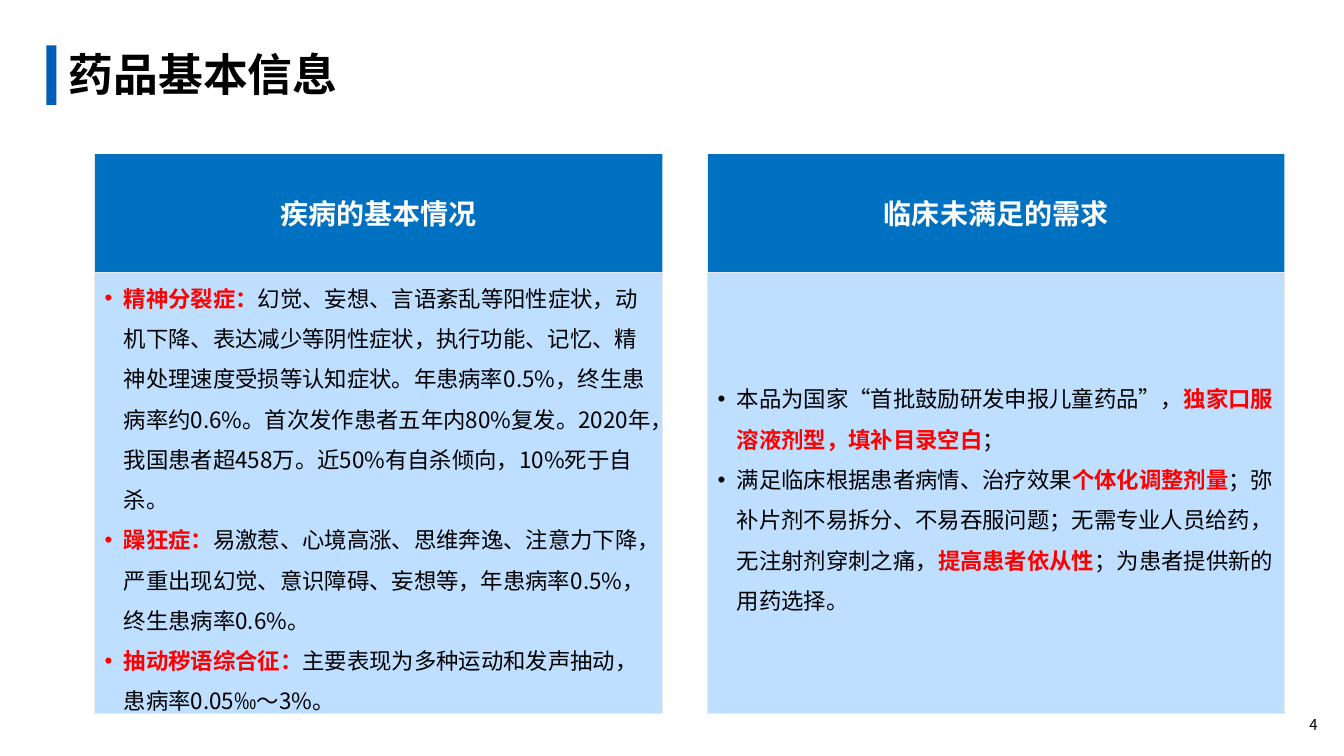
import lxml.etree
import pptx
import pptx.dml.color
import pptx.enum.lang
import pptx.enum.shapes
import pptx.enum.text
import pptx.oxml.ns
import pptx.util

PX = 9144
COLORS = {
    "black": "000000",
    "white": "FFFFFF",
    "red": "FF0000",
    "accent": "005EB8",
    "header": "0070C0",
    "panel": "BEDFFF",
    "border": "E9E9E9",
}
FONT = "Noto Sans CJK SC"
NUMBER_FONT = "Noto Sans CJK JP"
ALIGN = pptx.enum.text.PP_ALIGN
HEADER_HEIGHT = 117
BULLET_INDENT = 19

DISEASES = [
    [("精神分裂症：", True),
     ("幻觉、妄想、言语紊乱等阳性症状，动机下降、表达减少等阴性症状，执行功能、记忆、"
      "精神处理速度受损等认知症状。年患病率0.5%，终生患病率约0.6%。首次发作患者五年内"
      "80%复发。2020年，我国患者超458万。近50%有自杀倾向，10%死于自杀。", False)],
    [("躁狂症：", True),
     ("易激惹、心境高涨、思维奔逸、注意力下降，严重出现幻觉、意识障碍、妄想等，"
      "年患病率0.5%，终生患病率0.6%。", False)],
    [("抽动秽语综合征：", True),
     ("主要表现为多种运动和发声抽动，患病率0.05‰～3%。", False)],
]
NEEDS = [
    [("本品为国家“首批鼓励研发申报儿童药品”，", False),
     ("独家口服溶液剂型，填补目录空白", True),
     ("；", False)],
    [("满足临床根据患者病情、治疗效果", False),
     ("个体化调整剂量", True),
     ("；弥补片剂不易拆分、不易吞服问题；无需专业人员给药，无注射剂穿刺之痛，", False),
     ("提高患者依从性", True),
     ("；为患者提供新的用药选择。", False)],
]


def emu(*lengths):
    """Convert px lengths to EMU."""
    return [pptx.util.Emu(length * PX) for length in lengths]


def rgb(name):
    """Look up a named colour."""
    return pptx.dml.color.RGBColor.from_string(COLORS[name])


def add_run(paragraph, text, size, color, bold=False, font_name=FONT):
    """Append one formatted run, with its East Asian font set too."""
    run = paragraph.add_run()
    run.text = text
    font = run.font
    font.size = pptx.util.Pt(size)
    font.bold = bold
    font.name = font_name
    font.color.rgb = rgb(color)
    font.language_id = pptx.enum.lang.MSO_LANGUAGE_ID.SIMPLIFIED_CHINESE
    properties = run.font._element
    lxml.etree.SubElement(properties, pptx.oxml.ns.qn("a:ea"), typeface=font_name)


def add_bullet(paragraph):
    """Give a paragraph a hanging round bullet."""
    properties = paragraph._p.get_or_add_pPr()
    indent = BULLET_INDENT * PX
    properties.set("marL", str(indent))
    properties.set("indent", str(-indent))
    lxml.etree.SubElement(properties, pptx.oxml.ns.qn("a:buFont"), typeface="Arial")
    lxml.etree.SubElement(properties, pptx.oxml.ns.qn("a:buChar"), char="•")


def prepare_frame(text_frame):
    """Wrap the text, centre it vertically and keep the box size."""
    text_frame.word_wrap = True
    text_frame.auto_size = pptx.enum.text.MSO_AUTO_SIZE.NONE
    text_frame.vertical_anchor = pptx.enum.text.MSO_ANCHOR.MIDDLE


def add_rectangle(slide, box, fill, line=None):
    """Add a flat rectangle with an optional thin border."""
    kind = pptx.enum.shapes.MSO_SHAPE.RECTANGLE
    shape = slide.shapes.add_shape(kind, *emu(*box))
    shape.shadow.inherit = False
    shape.fill.solid()
    shape.fill.fore_color.rgb = rgb(fill)
    if line:
        shape.line.color.rgb = rgb(line)
        shape.line.width = pptx.util.Pt(0.75)
    else:
        shape.line.fill.background()
    prepare_frame(shape.text_frame)
    return shape


def fill_title(slide, box, text):
    """Place the title with the accent bar at its left."""
    left, top, width, height = box
    add_rectangle(slide, (left - 12, top + 4, 10, 59), "accent")
    title = slide.shapes.title
    title.left, title.top, title.width, title.height = emu(left, top, width, height)
    prepare_frame(title.text_frame)
    paragraph = title.text_frame.paragraphs[0]
    paragraph.alignment = ALIGN.LEFT
    add_run(paragraph, text, 32, "black", bold=True)


def add_panel(slide, box, heading, items):
    """Add a column with a heading band above a bulleted body."""
    left, top, width, height = box
    header = add_rectangle(slide, (left, top, width, HEADER_HEIGHT), "header")
    paragraph = header.text_frame.paragraphs[0]
    paragraph.alignment = ALIGN.CENTER
    add_run(paragraph, heading, 20, "white", bold=True)

    body_box = (left, top + HEADER_HEIGHT, width, height - HEADER_HEIGHT)
    text_frame = add_rectangle(slide, body_box, "panel", "border").text_frame
    for index, item in enumerate(items):
        paragraph = text_frame.add_paragraph() if index else text_frame.paragraphs[0]
        add_bullet(paragraph)
        paragraph.alignment = ALIGN.LEFT
        paragraph.line_spacing = 1.5
        for text, marked in item:
            add_run(paragraph, text, 16, "red" if marked else "black", bold=marked)


def add_page_number(slide, box, number):
    """Add the right-aligned page number."""
    text_frame = slide.shapes.add_textbox(*emu(*box)).text_frame
    prepare_frame(text_frame)
    text_frame.margin_left, text_frame.margin_right = emu(13, 13)
    text_frame.margin_top, text_frame.margin_bottom = emu(7, 7)
    paragraph = text_frame.paragraphs[0]
    paragraph.alignment = ALIGN.RIGHT
    add_run(paragraph, number, 10.7, "black", font_name=NUMBER_FONT)


def main():
    """Build and save the slide."""
    presentation = pptx.Presentation()
    presentation.slide_width, presentation.slide_height = emu(1333, 750)
    slide = presentation.slides.add_slide(presentation.slide_layouts[5])
    fill_title(slide, (58, 41, 1080, 65), "药品基本信息")
    add_panel(slide, (94, 153, 563, 555), "疾病的基本情况", DISEASES)
    add_panel(slide, (702, 153, 572, 555), "临床未满足的需求", NEEDS)
    add_page_number(slide, (1253, 699, 67, 40), "4")
    presentation.save("out.pptx")


if __name__ == "__main__":
    main()
